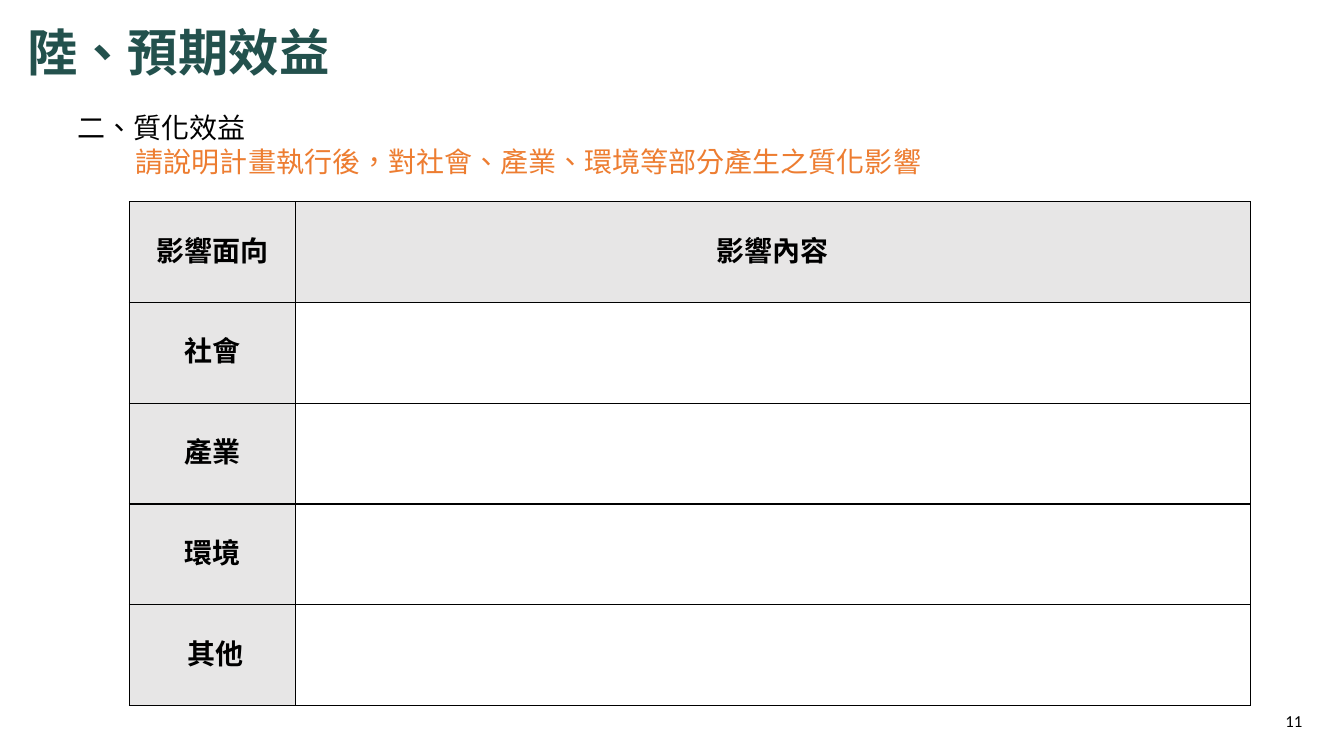
import pptx
import pptx.dml.color
import pptx.enum.lang
import pptx.enum.text
import pptx.oxml
import pptx.oxml.ns
import pptx.util
from lxml import etree

Cm = pptx.util.Cm
Pt = pptx.util.Pt
RGBColor = pptx.dml.color.RGBColor
ALIGN = pptx.enum.text.PP_ALIGN
ANCHOR = pptx.enum.text.MSO_ANCHOR
qn = pptx.oxml.ns.qn

GREEN = RGBColor(0x23, 0x51, 0x4D)
ORANGE = RGBColor(0xED, 0x7D, 0x31)
BLACK = RGBColor(0, 0, 0)
GREY = RGBColor(0xE7, 0xE6, 0xE6)
CJK_FONT = "Noto Sans CJK SC"
LINE_HEIGHT = 1.22

ASPECTS = ["社會", "產業", "環境", " 其他"]


def write(paragraph, text, size, color, bold=False, font=CJK_FONT, align=ALIGN.LEFT):
    """Add one run and set its paragraph's alignment and spacing."""
    paragraph.alignment = align
    paragraph.space_before = Pt(0)
    paragraph.line_spacing = Pt(round(size * LINE_HEIGHT, 1))
    run = paragraph.add_run()
    run.text = text
    run.font.size = Pt(size)
    run.font.bold = bold
    run.font.color.rgb = color
    run.font.name = font
    if font == CJK_FONT:
        run.font.language_id = pptx.enum.lang.MSO_LANGUAGE_ID.TRADITIONAL_CHINESE
        east_asian = etree.SubElement(run.font._element, qn("a:ea"))
        east_asian.set("typeface", font)


def place(box, left, top, width, height, anchor=ANCHOR.TOP):
    """Move a box and return its text frame."""
    box.left, box.top, box.width, box.height = Cm(left), Cm(top), Cm(width), Cm(height)
    frame = box.text_frame
    frame.word_wrap = True
    frame.auto_size = pptx.enum.text.MSO_AUTO_SIZE.NONE
    frame.vertical_anchor = anchor
    return frame


def remove_bullet(paragraph, first_indent):
    properties = paragraph._p.get_or_add_pPr()
    properties.set("marL", "0")
    properties.set("indent", str(Cm(first_indent)))
    etree.SubElement(properties, qn("a:buNone"))


def add_borders(cell):
    properties = cell._tc.get_or_add_tcPr()
    for side in ("lnL", "lnR", "lnT", "lnB"):
        line = etree.SubElement(properties, qn(f"a:{side}"), w=str(Pt(1)))
        fill = etree.SubElement(line, qn("a:solidFill"))
        etree.SubElement(fill, qn("a:srgbClr"), val=str(BLACK))


def add_heading_cell(cell, text):
    cell.fill.solid()
    cell.fill.fore_color.rgb = GREY
    cell.vertical_anchor = ANCHOR.MIDDLE
    cell.margin_left = cell.margin_right = Cm(0.18)
    cell.margin_top = cell.margin_bottom = 0
    write(cell.text_frame.paragraphs[0], text, 20, BLACK, bold=True, align=ALIGN.CENTER)


def add_impact_table(slide):
    rows = [["影響面向", "影響內容"]] + [[aspect, ""] for aspect in ASPECTS]
    frame = slide.shapes.add_table(len(rows), 2, Cm(3.26), Cm(5.08), Cm(28.25), Cm(12.7))
    table = frame.table
    table.horz_banding = False
    table.first_row = False
    table.columns[0].width = Cm(4.18)
    table.columns[1].width = Cm(24.07)
    for row, texts in enumerate(rows):
        for column, text in enumerate(texts):
            cell = table.cell(row, column)
            add_borders(cell)
            if text:
                add_heading_cell(cell, text)
            else:
                cell.fill.background()


def add_page_number(slide, number):
    box = slide.shapes.add_textbox(0, 0, 0, 0)
    frame = place(box, 31.85, 17.65, 1.52, 1.02, ANCHOR.MIDDLE)
    write(frame.paragraphs[0], number, 12, BLACK, font="Calibri", align=ALIGN.CENTER)


def main():
    deck = pptx.Presentation()
    deck.slide_width, deck.slide_height = Cm(33.87), Cm(19.05)
    slide = deck.slides.add_slide(deck.slide_layouts[1])

    title = place(slide.shapes.title, 0.43, 0.38, 11, 1.8)
    write(title.paragraphs[0], "陸、預期效益", 36, GREEN, bold=True)

    section = place(slide.placeholders[1], 1.7, 2.64, 29.79, 1.96)
    heading, instruction = section.paragraphs[0], section.add_paragraph()
    remove_bullet(heading, 0)
    write(heading, "二、質化效益", 20, BLACK)
    remove_bullet(instruction, 1.47)
    write(instruction, "請說明計畫執行後，對社會、產業、環境等部分產生之質化影響", 20, ORANGE)

    add_impact_table(slide)
    add_page_number(slide, "11")
    deck.save("out.pptx")


if __name__ == "__main__":
    main()
